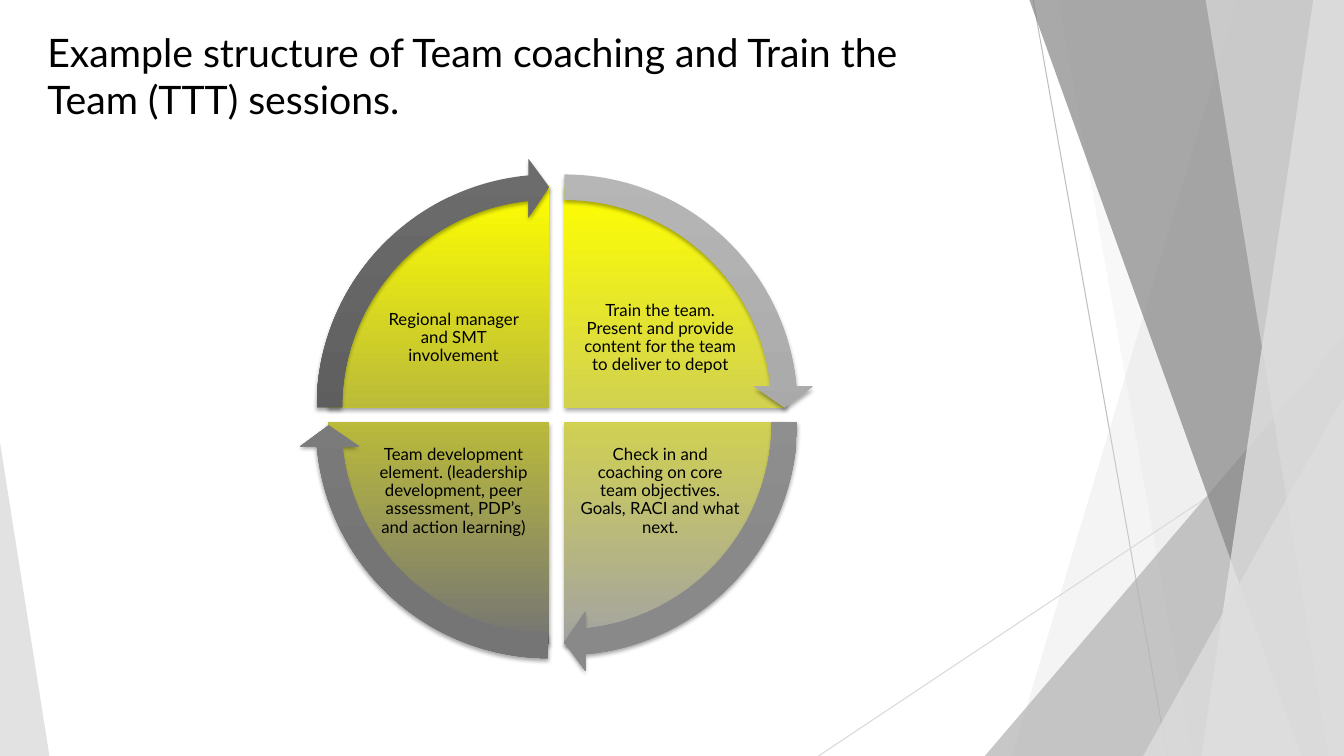
"""Builds a slide showing a four-part cycle of team coaching sessions."""
from lxml import etree
from pptx import Presentation
from pptx.dml.color import RGBColor
from pptx.enum import shapes, text
from pptx.oxml import ns
from pptx.util import Pt

FONT = "Lato"
COLOURS = {
    "ink": "000000", "yellow": "FFFF00", "light": "A3A3A3", "dark": "757575",
    "pale": "DDDDDD", "mist": "EBEBEB", "silver": "B2B2B2", "slate": "858585",
    "long_line": "BFBFBF", "short_line": "D9D9D9",
}
FACETS = [
    (884.16, 722.88, "pale", 30), (756, 851.76, "pale", 20),
    (735.12, 929.52, "slate", 70), (938.16, 858.24, "mist", 70),
    (861.12, 948.96, "pale", 65),
]
CORNERS = [
    (703.44, 239.76, 960, 1, "silver", 72), (816.48, 282.96, 960, 1, "pale", 80),
    (0, 316.08, 35.28, 0, "pale", 85),
]
QUARTERS = [
    ("Train the team. Present and provide content for the team to deliver to depot",
     1, -1, "light", ("B6B6B6", "A3A3A3"), (0, 0)),
    ("Check in and coaching on core team objectives. Goals, RACI and what next.",
     1, 1, "light", ("9C9C9C", "898989"), (0, 0)),
    ("Team development element. (leadership development, peer assessment, "
     "PDP’s and action learning)",
     -1, 1, "dark", ("888888", "757575"), (-0.5, 2.2)),
    ("Regional manager and SMT involvement",
     -1, -1, "dark", ("6C6C6C", "575757"), (0, 0)),
]
FULL_TURN, QUARTER_TURN = 216, 54


def rgb(value):
    """Return a colour from its name in the palette or its hex string."""
    return RGBColor.from_string(COLOURS.get(value, value))


def fill_clear(shape, colour, opacity):
    """Fill a shape with a see-through colour and no outline."""
    shape.shadow.inherit = False
    shape.fill.solid()
    shape.fill.fore_color.rgb = rgb(colour)
    shape.line.fill.background()
    tint = shape.element.spPr.find(".//" + ns.qn("a:srgbClr"))
    etree.SubElement(tint, ns.qn("a:alpha"), val=str(opacity * 1000))


def fill_shaded(shape, top, bottom, end):
    """Fill a shape from top to bottom and give it a soft shadow."""
    shape.shadow.inherit = False
    shape.line.fill.background()
    shape.fill.gradient()
    shape.fill.gradient_angle = 270
    for stop, colour, position in zip(shape.fill.gradient_stops, (top, bottom), (0, end)):
        stop.color.rgb = rgb(colour)
        stop.position = position
    effects = shape.element.spPr.find(ns.qn("a:effectLst"))
    shadow = etree.SubElement(
        effects, ns.qn("a:outerShdw"), blurRad=str(Pt(3)), dist=str(Pt(2)),
        dir="5400000", rotWithShape="0")
    tint = etree.SubElement(shadow, ns.qn("a:srgbClr"), val=COLOURS["ink"])
    etree.SubElement(tint, ns.qn("a:alpha"), val="35000")


def style_text(frame, size):
    """Set the font of every run in a text frame."""
    for paragraph in frame.paragraphs:
        for run in paragraph.runs:
            run.font.name = FONT
            run.font.size = Pt(size)
            run.font.color.rgb = rgb("ink")


def add_centred(slide, preset, centre_x, centre_y, size, turns):
    """Add a square preset shape around a centre with its adjustments."""
    shape = slide.shapes.add_shape(
        preset, Pt(centre_x - size / 2), Pt(centre_y - size / 2), Pt(size), Pt(size))
    for index, turn in enumerate(turns):
        shape.adjustments[index] = turn
    return shape


def add_backdrop(slide, width, height):
    """Draw the thin lines and translucent facets at the slide edges."""
    for start, end, colour in [
        ((738, 0), (833.76, height), "long_line"),
        ((width, 290.16), (584.64, height), "short_line"),
    ]:
        line = slide.shapes.add_connector(
            shapes.MSO_CONNECTOR.STRAIGHT, *map(Pt, start + end))
        line.line.color.rgb = rgb(colour)
        line.line.width = Pt(0.75)
        etree.SubElement(line.element.spPr, ns.qn("a:effectLst"))

    def add_facet(top_x, bottom_x, colour, opacity):
        """Draw one facet that reaches the right edge."""
        outline = slide.shapes.build_freeform(Pt(top_x), Pt(-0.6))
        outline.add_line_segments(
            [(Pt(width), Pt(-0.6)), (Pt(width), Pt(height)), (Pt(bottom_x), Pt(height))])
        fill_clear(outline.convert_to_shape(), colour, opacity)

    def add_corner(left, top, right, tip, colour, opacity):
        """Draw one right-angled triangle standing on the bottom edge."""
        corner = slide.shapes.add_shape(
            shapes.MSO_SHAPE.ISOSCELES_TRIANGLE,
            Pt(left), Pt(top), Pt(right - left), Pt(height - top))
        corner.adjustments[0] = tip
        fill_clear(corner, colour, opacity)

    for facet in FACETS[:2]:
        add_facet(*facet)
    add_corner(*CORNERS[0])
    for facet in FACETS[2:]:
        add_facet(*facet)
    for corner in CORNERS[1:]:
        add_corner(*corner)


def add_title(slide, left, top, width, height):
    """Place and format the slide title."""
    title = slide.shapes.title
    title.left, title.top, title.width, title.height = map(Pt, (left, top, width, height))
    frame = title.text_frame
    frame.text = "Example structure of Team coaching and Train the Team (TTT) sessions."
    frame.word_wrap = True
    frame.auto_size = text.MSO_AUTO_SIZE.NONE
    frame.vertical_anchor = text.MSO_ANCHOR.TOP
    frame.paragraphs[0].alignment = text.PP_ALIGN.LEFT
    style_text(frame, 28)


def add_label(slide, centre_x, centre_y, wording):
    """Write the wording of one quarter around a centre."""
    width, height = 116.64, 87.12
    label = slide.shapes.add_textbox(
        Pt(centre_x - width / 2), Pt(centre_y - height / 2), Pt(width), Pt(height))
    frame = label.text_frame
    frame.text = wording
    frame.word_wrap = True
    frame.vertical_anchor = text.MSO_ANCHOR.MIDDLE
    frame.margin_left = frame.margin_right = Pt(1.2)
    frame.margin_top = frame.margin_bottom = Pt(1.2)
    frame.paragraphs[0].alignment = text.PP_ALIGN.CENTER
    frame.paragraphs[0].line_spacing = 0.9
    style_text(frame, 12)


def add_cycle(slide, left, top, size):
    """Draw the four quarters, then the arrows that run round them."""
    middle_x, middle_y = left + size / 2, top + size / 2
    starts = [(index - 1) * QUARTER_TURN % FULL_TURN for index in range(len(QUARTERS))]
    for start, (wording, side, level, shade, _, _) in zip(starts, QUARTERS):
        quarter = add_centred(
            slide, shapes.MSO_SHAPE.PIE, middle_x + side * 5.4, middle_y + level * 5.4,
            316.8, (start, (start + QUARTER_TURN) % FULL_TURN))
        fill_shaded(quarter, "yellow", shade, 1)
        add_label(slide, middle_x + side * 73.8, middle_y + level * 54.72, wording)
    for start, (_, side, level, _, shades, (shift_x, shift_y)) in zip(starts, QUARTERS):
        arrow = add_centred(
            slide, shapes.MSO_SHAPE.CIRCULAR_ARROW,
            middle_x + side * 5.4 + shift_x, middle_y + level * 5.4 + shift_y,
            356.4, (0.051, 3.275, start + 50.725, start, 0.059))
        fill_shaded(arrow, *shades, 0.78)


def main():
    """Build the slide and save it."""
    deck = Presentation()
    deck.slide_width, deck.slide_height = Pt(960), Pt(540)
    slide = deck.slides.add_slide(deck.slide_layouts[5])
    add_backdrop(slide, 960, 540)
    add_title(slide, 26.64, 16.56, 676.8, 103.68)
    add_cycle(slide, 214.2, 112.68, 367.2)
    deck.save("out.pptx")


if __name__ == "__main__":
    main()
